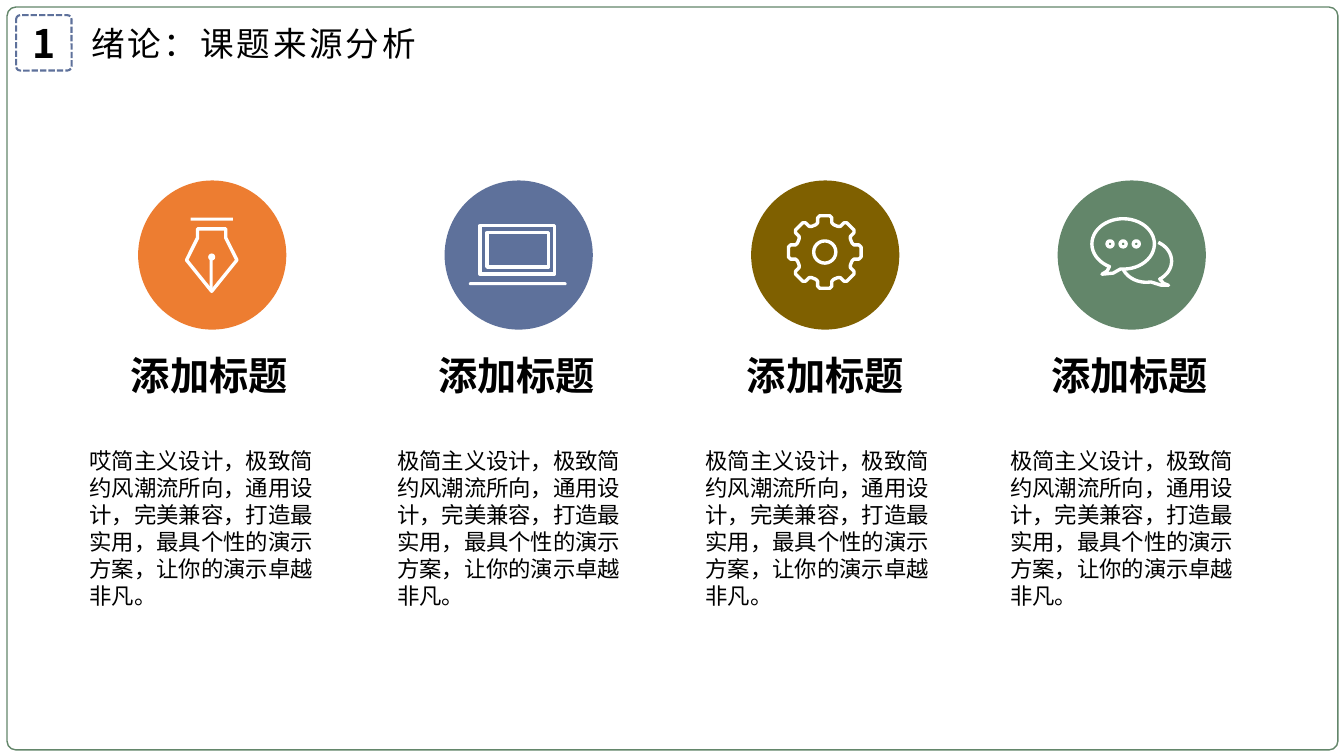
import math

import lxml.etree
import pptx
import pptx.util
import pptx.dml.color
import pptx.enum.dml
import pptx.enum.shapes
import pptx.enum.text
import pptx.oxml.ns

Inches = pptx.util.Inches
Pt = pptx.util.Pt
RGBColor = pptx.dml.color.RGBColor
SHAPE = pptx.enum.shapes.MSO_SHAPE
ALIGN = pptx.enum.text.PP_ALIGN
ANCHOR = pptx.enum.text.MSO_ANCHOR
AUTO_SIZE = pptx.enum.text.MSO_AUTO_SIZE

BLACK = RGBColor(0x00, 0x00, 0x00)
WHITE = RGBColor(0xFF, 0xFF, 0xFF)
ORANGE = RGBColor(0xED, 0x7D, 0x31)
BLUE = RGBColor(0x5E, 0x71, 0x9B)
OLIVE = RGBColor(0x7F, 0x60, 0x00)
GREEN = RGBColor(0x63, 0x86, 0x6A)
FONT = "Noto Sans CJK SC"
STROKE = 2.4
BODY = "简主义设计，极致简约风潮流所向，通用设计，完美兼容，打造最实用，最具个性的演示方案，让你的演示卓越非凡。"


def set_all(target, formats):
    for name, value in formats.items():
        setattr(target, name, value)


def paint(shape, fill=None, line=None, width=STROKE, dash=None):
    shape.shadow.inherit = False
    if fill is None:
        shape.fill.background()
    else:
        shape.fill.solid()
        shape.fill.fore_color.rgb = fill
    if line is None:
        shape.line.fill.background()
        return shape
    shape.line.color.rgb = line
    set_all(shape.line, {"width": Pt(width), "dash_style": dash})
    outline = shape.line._get_or_add_ln()
    for miter in outline.findall(pptx.oxml.ns.qn("a:miter")):
        outline.remove(miter)
    lxml.etree.SubElement(outline, pptx.oxml.ns.qn("a:round"))
    return shape


def add_preset(shapes, kind, bounds, corner=None, **look):
    shape = shapes.add_shape(kind, *map(Inches, bounds))
    if corner is not None:
        shape.adjustments[0] = corner
    return paint(shape, **look)


def add_ring(shapes, x, y, radius, **look):
    bounds = (x - radius, y - radius, 2 * radius, 2 * radius)
    return add_preset(shapes, SHAPE.OVAL, bounds, **look)


def add_outline(shapes, points, close=True):
    corners = [(Inches(x), Inches(y)) for x, y in points]
    builder = shapes.build_freeform(*corners[0], scale=1.0)
    builder.add_line_segments(corners[1:], close=close)
    return paint(builder.convert_to_shape(), line=WHITE)


def write(box, text, size, frame_format, bold=False, align=None, spacing=None):
    set_all(box.text_frame, frame_format)
    para = box.text_frame.paragraphs[0]
    para.alignment = align
    span = para.add_run()
    span.text = text
    set_all(span.font, {"name": FONT, "size": Pt(size), "bold": bold})
    span.font.color.rgb = BLACK
    properties = span._r.get_or_add_rPr()
    east_asian = lxml.etree.SubElement(properties, pptx.oxml.ns.qn("a:ea"))
    east_asian.set("typeface", FONT)
    if spacing:
        properties.set("spc", str(spacing * 100))


def add_text(page, bounds, text, size, wrap, bold=False):
    box = page.shapes.add_textbox(*map(Inches, bounds))
    frame = {"word_wrap": wrap, "auto_size": AUTO_SIZE.SHAPE_TO_FIT_TEXT}
    write(box, text, size, frame, bold)


def arc(x, y, radius_x, radius_y, start, end, steps=48):
    angles = [math.radians(start + (end - start) * i / steps) for i in range(steps + 1)]
    return [(x + radius_x * math.cos(a), y + radius_y * math.sin(a)) for a in angles]


def draw_pen(shapes):
    add_preset(shapes, SHAPE.RECTANGLE, (2.08, 2.53, 0.03, 0.34), fill=WHITE)
    add_ring(shapes, 2.1, 2.55, 0.035, fill=WHITE)
    add_preset(shapes, SHAPE.RECTANGLE, (1.89, 2.16, 0.42, 0.03), fill=WHITE)
    add_outline(shapes, [(2.1, 2.89), (1.85, 2.58), (1.96, 2.36), (1.96, 2.27),
                         (2.24, 2.27), (2.24, 2.36), (2.35, 2.58)])


def draw_laptop(shapes):
    for bounds in [(4.76, 2.24, 0.74, 0.48), (4.83, 2.31, 0.61, 0.34)]:
        add_preset(shapes, SHAPE.RECTANGLE, bounds, line=WHITE)
    add_preset(shapes, SHAPE.ROUNDED_RECTANGLE, (4.65, 2.8, 0.97, 0.03), 0.5, fill=WHITE)


def draw_gear(shapes):
    x, y = 8.18, 2.5
    half_tooth = [(0.27, 0.09), (0.29, 0.07), (0.34, 0.07), (0.36, 0.05)]
    tooth = [(out, -side) for out, side in half_tooth] + half_tooth[::-1]
    points = []
    for index in range(8):
        cosine, sine = math.cos(index * math.pi / 4), math.sin(index * math.pi / 4)
        points += [(x + out * cosine - side * sine, y + out * sine + side * cosine)
                   for out, side in tooth]
    add_outline(shapes, points)
    add_ring(shapes, x, y, 0.11, line=WHITE)


def draw_chat(shapes):
    front_tail = [(10.98, 2.69), (10.93, 2.72), (11.04, 2.71)]
    add_outline(shapes, arc(11.14, 2.42, 0.31, 0.25, 95, -244) + front_tail)
    back_tail = [(11.54, 2.81), (11.59, 2.83), (11.52, 2.83)]
    back = (11.37, 2.59, 0.25, 0.21)
    add_outline(shapes, arc(*back, -62, 58) + back_tail + arc(*back, 80, 156), close=False)
    for index in range(3):
        add_ring(shapes, 11.01 + 0.13 * index, 2.42, 0.03, line=WHITE)


def add_header(page):
    add_preset(page.shapes, SHAPE.ROUNDED_RECTANGLE, (0.07, 0.07, 13.2, 7.37), 0.012,
               line=GREEN, width=1)
    number = add_preset(page.shapes, SHAPE.ROUNDED_RECTANGLE, (0.16, 0.15, 0.55, 0.55), 0.076,
                        line=BLUE, width=1.5, dash=pptx.enum.dml.MSO_LINE.SQUARE_DOT)
    sides = ("left", "top", "right", "bottom")
    frame = {"vertical_anchor": ANCHOR.MIDDLE}
    write(number, "1", 28, frame | {f"margin_{side}": 0 for side in sides},
          bold=True, align=ALIGN.CENTER)
    heading = add_preset(page.shapes, SHAPE.ROUNDED_RECTANGLE, (0.72, 0.15, 3.59, 0.55), 0.091)
    write(heading, "绪论：课题来源分析", 24, frame, align=ALIGN.CENTER, spacing=2)


def add_topic(page, circle_left, title_left, color, draw_icon, body):
    group = page.shapes.add_group_shape()
    add_preset(group.shapes, SHAPE.OVAL, (circle_left, 1.79, 1.47, 1.48), fill=color)
    draw_icon(group.shapes)
    add_text(page, (title_left, 3.44, 1.77, 0.57), "添加标题", 28, False, bold=True)
    add_text(page, (title_left - 0.41, 4.39, 2.6, 1.72), body, 16, True)


def main():
    deck = pptx.Presentation()
    set_all(deck, {"slide_width": Inches(13.33), "slide_height": Inches(7.5)})
    page = deck.slides.add_slide(deck.slide_layouts[6])
    add_header(page)
    topics = [
        (1.2, ORANGE, draw_pen, "哎" + BODY),
        (4.25, BLUE, draw_laptop, "极" + BODY),
        (7.31, OLIVE, draw_gear, "极" + BODY),
        (10.33, GREEN, draw_chat, "极" + BODY),
    ]
    for index, topic in enumerate(topics):
        add_topic(page, 1.37 + 3.04 * index, *topic)
    deck.save("out.pptx")


if __name__ == "__main__":
    main()
